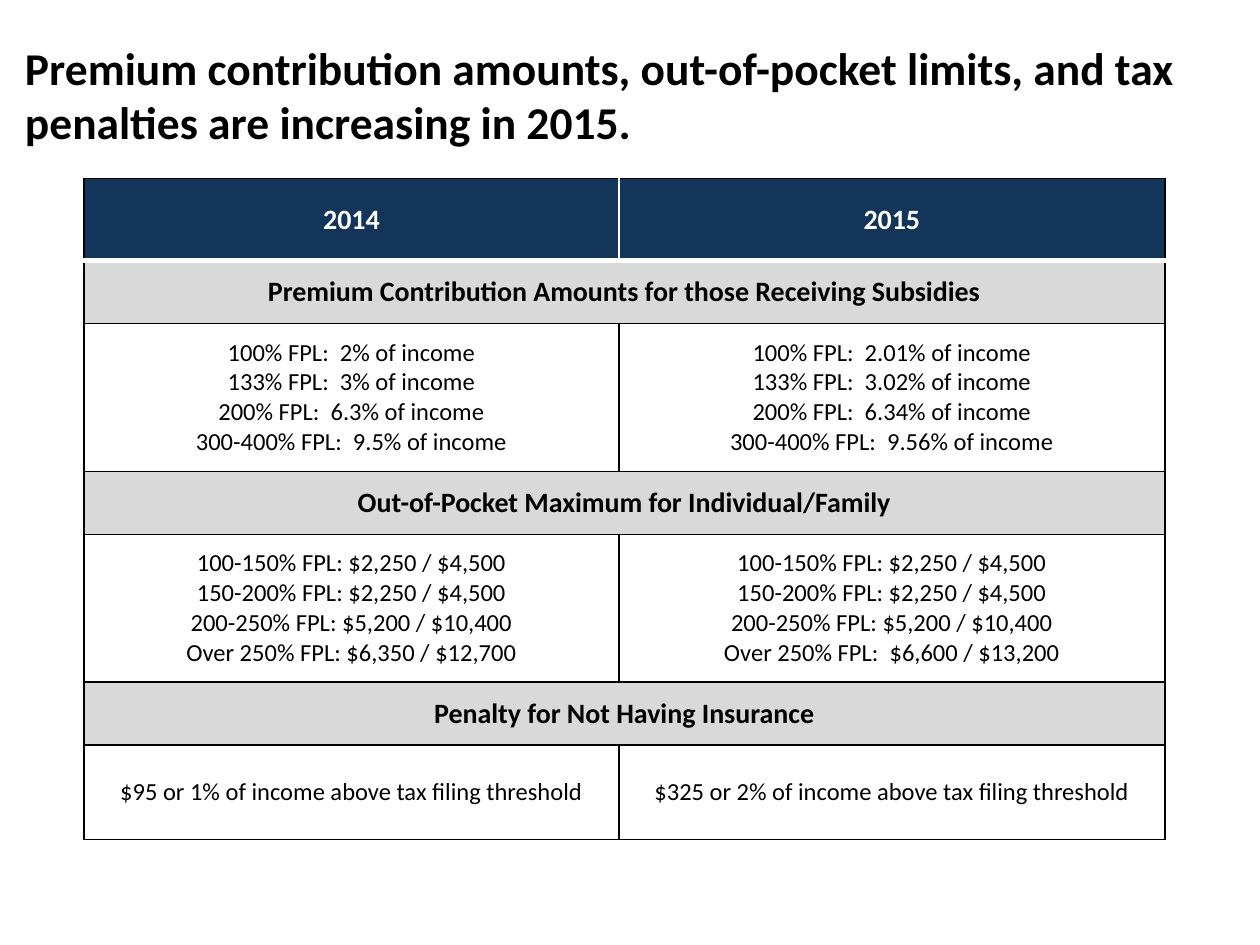
from dataclasses import dataclass

from lxml.etree import SubElement
from pptx import Presentation
from pptx.dml.color import RGBColor
from pptx.enum.text import MSO_ANCHOR as Anchor, PP_ALIGN as Align
from pptx.oxml.ns import qn
from pptx.util import Pt


@dataclass(frozen=True)
class Theme:
    font: str = "Calibri"
    black: str = "000000"
    white: str = "FFFFFF"
    navy: str = "133559"
    gray: str = "D9D9D9"
    title_size: int = 26
    heading_size: int = 16
    body_size: int = 14
    rule: int = 1
    heavy_rule: int = 3


TITLE = ("Premium contribution amounts, out-of-pocket limits, and tax "
         "penalties are increasing in 2015.")
YEARS = ("2014", "2015")
SECTIONS = [
    ("Premium Contribution Amounts for those Receiving Subsidies",
     ["100% FPL:  2% of income", "133% FPL:  3% of income",
      "200% FPL:  6.3% of income", "300-400% FPL:  9.5% of income"],
     ["100% FPL:  2.01% of income", "133% FPL:  3.02% of income",
      "200% FPL:  6.34% of income", "300-400% FPL:  9.56% of income"]),
    ("Out-of-Pocket Maximum for Individual/Family",
     ["100-150% FPL: $2,250 / $4,500", "150-200% FPL: $2,250 / $4,500",
      "200-250% FPL: $5,200 / $10,400", "Over 250% FPL: $6,350 / $12,700"],
     ["100-150% FPL: $2,250 / $4,500", "150-200% FPL: $2,250 / $4,500",
      "200-250% FPL: $5,200 / $10,400", "Over 250% FPL:  $6,600 / $13,200"]),
    ("Penalty for Not Having Insurance",
     ["$95 or 1% of income above tax filing threshold"],
     ["$325 or 2% of income above tax filing threshold"]),
]
COLUMN_WIDTHS = (305.7, 311.9)
ROW_HEIGHTS = (46.8, 36, 84.6, 36, 84.4, 36, 54)


def write(frame, lines, *, font, size, color, bold=False, align=Align.LEFT):
    """Fill a text frame with one paragraph per line."""
    for index, line in enumerate(lines):
        para = frame.paragraphs[0] if index == 0 else frame.add_paragraph()
        para.alignment = align
        span = para.add_run()
        span.text = line
        span.font.name = font
        span.font.size = Pt(size)
        span.font.bold = bold
        span.font.color.rgb = RGBColor.from_string(color)


def set_borders(cell, borders):
    """Draw the sides given as {side: (color, width)}, in schema order L, R, T, B."""
    properties = cell._tc.get_or_add_tcPr()
    for index, side in enumerate("LRTB"):
        color, width = borders[side]
        line = SubElement(properties, qn(f"a:ln{side}"), w=str(Pt(width)))
        fill = SubElement(line, qn("a:solidFill"))
        SubElement(fill, qn("a:srgbClr"), val=color)
        properties.insert(index, line)


class PageBuilder:
    def __init__(self, page, theme):
        self.page = page
        self.theme = theme

    def title(self, text, left, top, width, height):
        box = self.page.shapes.add_textbox(Pt(left), Pt(top), Pt(width), Pt(height))
        frame = box.text_frame
        frame.word_wrap = True
        frame.vertical_anchor = Anchor.MIDDLE
        write(frame, [text], font=self.theme.font, size=self.theme.title_size,
              color=self.theme.black, bold=True)

    def table(self, left, top, widths, heights):
        shape = self.page.shapes.add_table(
            len(heights), len(widths), Pt(left), Pt(top),
            Pt(sum(widths)), Pt(sum(heights)))
        table = shape.table
        for column, width in zip(table.columns, widths):
            column.width = Pt(width)
        for row, height in zip(table.rows, heights):
            row.height = Pt(height)
        return table

    def cell(self, cell, lines, *, fill=None, color=None, heading=False, **sides):
        theme = self.theme
        cell.vertical_anchor = Anchor.MIDDLE
        cell.margin_left = cell.margin_right = Pt(5)
        cell.margin_top = cell.margin_bottom = 0
        if fill:
            cell.fill.solid()
            cell.fill.fore_color.rgb = RGBColor.from_string(fill)
        else:
            cell.fill.background()
        set_borders(cell, dict.fromkeys("LRTB", (theme.black, theme.rule)) | sides)
        write(cell.text_frame, lines, font=theme.font, bold=heading,
              size=theme.heading_size if heading else theme.body_size,
              color=color or theme.black, align=Align.CENTER)

    def comparison(self, table, years, sections):
        theme = self.theme
        thin = (theme.white, theme.rule)
        heavy = (theme.white, theme.heavy_rule)
        for column, (year, inner_side) in enumerate(zip(years, "RL")):
            self.cell(table.cell(0, column), [year], fill=theme.navy,
                      color=theme.white, heading=True,
                      **{inner_side: thin, "B": heavy})
        for index, (heading, *columns) in enumerate(sections):
            row = 1 + 2 * index
            top_side = {"T": heavy} if index == 0 else {}
            table.cell(row, 0).merge(table.cell(row, 1))
            for column, lines in enumerate(([heading], [])):
                self.cell(table.cell(row, column), lines, fill=theme.gray,
                          heading=True, **top_side)
            for column, lines in enumerate(columns):
                self.cell(table.cell(row + 1, column), lines)


def main():
    deck = Presentation()
    deck.slide_width, deck.slide_height = Pt(720), Pt(540)
    page = deck.slides.add_slide(deck.slide_layouts[6])
    builder = PageBuilder(page, Theme())
    builder.title(TITLE, 7.2, 18, 705.6, 72)
    table = builder.table(48, 102, COLUMN_WIDTHS, ROW_HEIGHTS)
    builder.comparison(table, YEARS, SECTIONS)
    deck.save("out.pptx")


if __name__ == "__main__":
    main()
